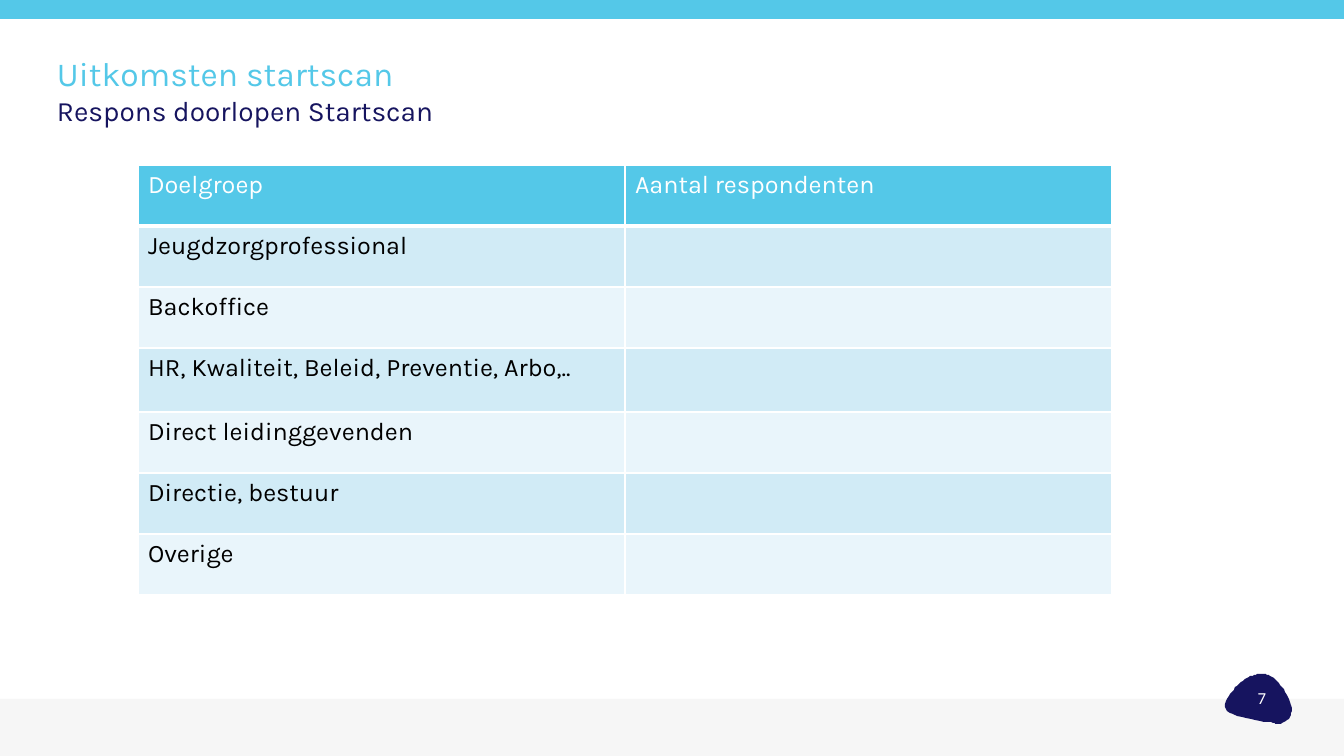
import dataclasses

import lxml.etree
import pptx
import pptx.dml.color
import pptx.enum.shapes
import pptx.enum.text
import pptx.oxml.ns
import pptx.util

EMU_PER_PX = 914400 / 100.8
ALIGN = pptx.enum.text.PP_ALIGN
ANCHOR = pptx.enum.text.MSO_ANCHOR


@dataclasses.dataclass(frozen=True)
class Theme:
    sky: str = "54C8E8"
    navy: str = "16145F"
    white: str = "FFFFFF"
    black: str = "000000"
    footer: str = "F4F4F4"
    bands: tuple = ("D1EBF6", "E9F5FB")
    font: str = "Karla"
    number_font: str = "Calibri"
    title_size: int = 24
    subtitle_size: int = 20
    table_size: int = 18
    number_size: int = 12


def px(length):
    return pptx.util.Emu(round(length * EMU_PER_PX))


def rgb(colour):
    return pptx.dml.color.RGBColor.from_string(colour)


def add_xml(parent, tag, **attributes):
    return lxml.etree.SubElement(parent, pptx.oxml.ns.qn(tag), attributes)


def bezier(start, control_1, control_2, end, steps=16):
    for step in range(1, steps + 1):
        t = step / steps
        weights = ((1 - t) ** 3, 3 * t * (1 - t) ** 2, 3 * t * t * (1 - t), t ** 3)
        corners = (start, control_1, control_2, end)
        yield tuple(sum(w * c[axis] for w, c in zip(weights, corners)) for axis in (0, 1))


class SlideBuilder:
    def __init__(self, presentation, theme):
        self.theme = theme
        self.slide = presentation.slides.add_slide(presentation.slide_layouts[5])

    def style(self, paragraph, size, colour, font=None, align=ALIGN.LEFT, line_spacing=None):
        paragraph.alignment = align
        if line_spacing:
            paragraph.line_spacing = line_spacing
        for run in paragraph.runs:
            run.font.name = font or self.theme.font
            run.font.size = pptx.util.Pt(size)
            run.font.bold = False
            run.font.color.rgb = rgb(colour)

    def paint(self, shape, colour, opacity=100):
        shape.shadow.inherit = False
        shape.fill.solid()
        shape.fill.fore_color.rgb = rgb(colour)
        shape.line.fill.background()
        if opacity < 100:
            swatch = shape.fill._xPr.find(".//" + pptx.oxml.ns.qn("a:srgbClr"))
            add_xml(swatch, "a:alpha", val=str(opacity * 1000))

    def bar(self, left, top, width, height, colour, opacity=100):
        shape = self.slide.shapes.add_shape(
            pptx.enum.shapes.MSO_SHAPE.RECTANGLE, px(left), px(top), px(width), px(height))
        self.paint(shape, colour, opacity)

    def badge(self, start, curves, colour):
        outline = self.slide.shapes.build_freeform(*start, scale=EMU_PER_PX)
        for control_1, control_2, end in curves:
            outline.add_line_segments(list(bezier(start, control_1, control_2, end)), close=False)
            start = end
        outline.add_line_segments([], close=True)
        self.paint(outline.convert_to_shape(), colour)

    def fill_text(self, shape, text, anchor, bottom_inset=0, **style):
        frame = shape.text_frame
        frame.word_wrap = True
        frame.auto_size = pptx.enum.text.MSO_AUTO_SIZE.NONE
        frame.vertical_anchor = anchor
        frame.margin_left = frame.margin_top = frame.margin_right = 0
        frame.margin_bottom = px(bottom_inset)
        frame.text = text
        self.style(frame.paragraphs[0], **style)

    def title(self, text, left, top, width, height, **style):
        heading = self.slide.shapes.title
        heading.left, heading.top = px(left), px(top)
        heading.width, heading.height = px(width), px(height)
        self.fill_text(heading, text, ANCHOR.MIDDLE, **style)

    def text(self, text, left, top, width, height, anchor, **style):
        box = self.slide.shapes.add_textbox(px(left), px(top), px(width), px(height))
        self.fill_text(box, text, anchor, **style)

    def border(self, cell, bottom_width):
        properties = cell._tc.get_or_add_tcPr()
        for side, width in (("L", 1), ("R", 1), ("T", 1), ("B", bottom_width)):
            line = add_xml(properties, "a:ln" + side, w=str(pptx.util.Pt(width)))
            add_xml(add_xml(line, "a:solidFill"), "a:srgbClr", val=self.theme.white)

    def table(self, rows, left, top, column_width, row_heights):
        columns = len(rows[0])
        grid = self.slide.shapes.add_table(
            len(rows), columns, px(left), px(top),
            px(column_width * columns), px(sum(row_heights))).table
        for column in grid.columns:
            column.width = px(column_width)
        for index, (labels, height) in enumerate(zip(rows, row_heights)):
            grid.rows[index].height = px(height)
            header = index == 0
            for cell, label in zip(grid.rows[index].cells, labels):
                self.border(cell, 3 if header else 1)
                cell.fill.solid()
                cell.fill.fore_color.rgb = rgb(
                    self.theme.sky if header else self.theme.bands[(index - 1) % 2])
                if label:
                    cell.text_frame.text = label
                    self.style(cell.text_frame.paragraphs[0], self.theme.table_size,
                               self.theme.white if header else self.theme.black)


def main():
    presentation = pptx.Presentation()
    presentation.slide_width, presentation.slide_height = px(1344), px(756)
    theme = Theme()
    builder = SlideBuilder(presentation, theme)

    builder.bar(0, 699, 1344, 57, theme.footer, opacity=80)
    badge_curves = [
        ((1258, 674), (1255, 675), (1252, 676)),
        ((1244, 678), (1230, 690), (1225, 704)),
        ((1220, 718), (1270, 722), (1274, 723)),
        ((1275, 724), (1276, 724), (1277, 724)),
        ((1286, 724), (1299, 715), (1287, 695)),
        ((1278, 678), (1269, 674), (1261, 674)),
    ]
    builder.badge((1261, 674), badge_curves, theme.navy)
    builder.bar(0, 0, 1344, 19, theme.sky)

    builder.title("Uitkomsten startscan", 57, 52, 1227, 82, bottom_inset=35,
                  size=theme.title_size, colour=theme.sky, line_spacing=0.9)
    builder.text("7", 1238, 677, 48, 41, ANCHOR.MIDDLE, size=theme.number_size,
                 colour=theme.white, font=theme.number_font, align=ALIGN.CENTER)
    builder.text("Respons doorlopen Startscan", 57, 97, 392, 24, ANCHOR.TOP,
                 size=theme.subtitle_size, colour=theme.navy, line_spacing=0.9)

    audiences = ["Jeugdzorgprofessional", "Backoffice",
                 "HR, Kwaliteit, Beleid, Preventie, Arbo,..",
                 "Direct leidinggevenden", "Directie, bestuur", "Overige"]
    rows = [("Doelgroep", "Aantal respondenten")] + [(name, "") for name in audiences]
    builder.table(rows, 138, 165, 487, [61, 61, 61, 64, 61, 61, 61])

    presentation.save("out.pptx")


if __name__ == "__main__":
    main()
